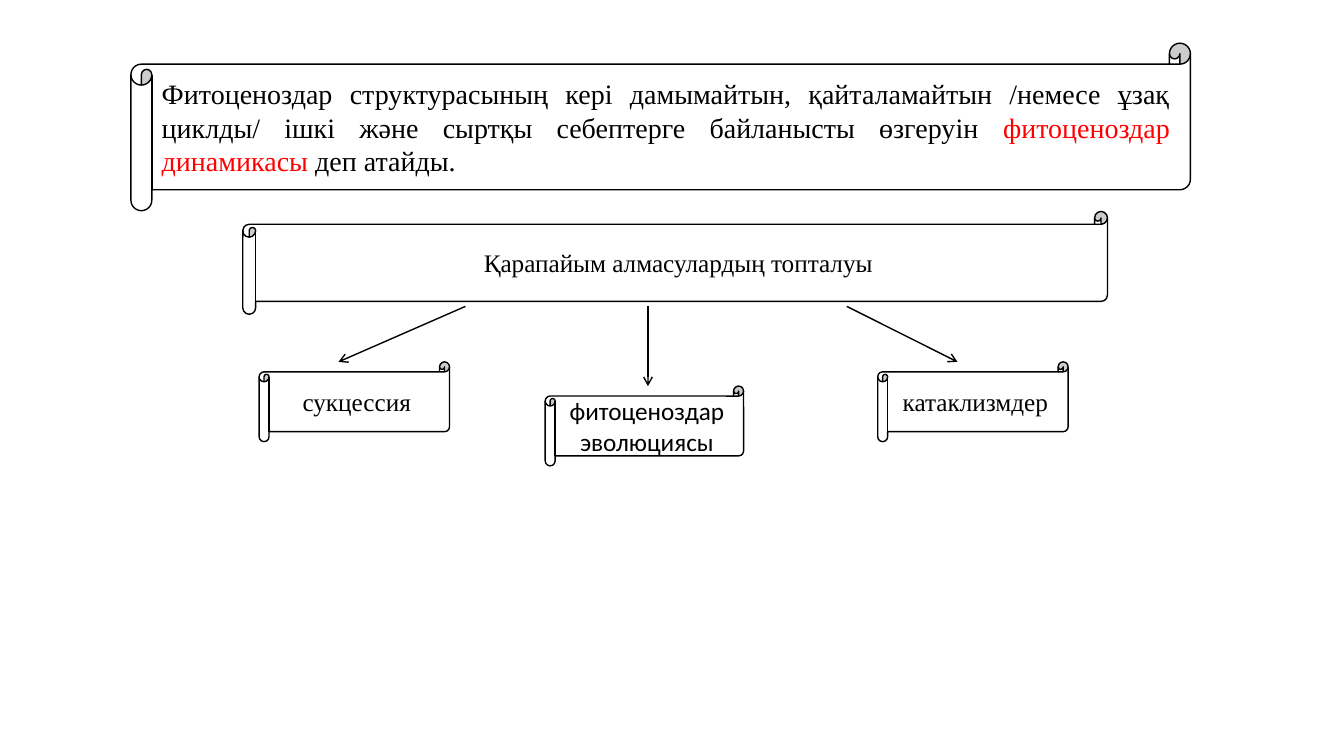
from lxml import etree
from pptx import Presentation
from pptx.dml.color import RGBColor
from pptx.enum import shapes, text
from pptx.oxml import ns
from pptx.util import Cm, Pt

SERIF = "Times New Roman"
SANS = "Calibri"
BLACK, WHITE, RED = "000000", "FFFFFF", "FF0000"

ARROW_TOP = 7.72
BRANCH_HEIGHT = 2.01
# label, font, left, top, width, arrow start x, arrow end x
BRANCHES = [
    ("сукцессия", SERIF, 6.53, 9.12, 4.8, 11.73, 8.53),
    ("фитоценоздар эволюциясы", SANS, 13.74, 9.73, 5, 16.33, 16.33),
    ("катаклизмдер", SERIF, 22.12, 9.12, 4.8, 21.34, 24.13),
]


def color(value):
    return RGBColor.from_string(value)


def add_scroll(page, box, spans, size=18, font=SERIF, align=text.PP_ALIGN.CENTER):
    """Draw a scroll in box (left, top, width, height) with (words, color) spans."""
    scroll = page.shapes.add_shape(
        shapes.MSO_SHAPE.HORIZONTAL_SCROLL, *(Cm(length) for length in box))
    scroll.shadow.inherit = False
    scroll.fill.solid()
    scroll.fill.fore_color.rgb = color(WHITE)
    scroll.line.color.rgb = color(BLACK)
    scroll.line.width = Pt(1)

    frame = scroll.text_frame
    frame.word_wrap = True
    frame.vertical_anchor = text.MSO_ANCHOR.MIDDLE
    para = frame.paragraphs[0]
    para.alignment = align
    for words, ink in spans:
        span = para.add_run()
        span.text = words
        span.font.name = font
        span.font.size = Pt(size)
        span.font.color.rgb = color(ink)


def add_arrow(page, start, end):
    arrow = page.shapes.add_connector(
        shapes.MSO_CONNECTOR.STRAIGHT, *(Cm(length) for length in start + end))
    arrow.line.color.rgb = color(BLACK)
    arrow.line.width = Pt(1)
    # Open arrowhead, no shadow
    outline = arrow.line._get_or_add_ln()
    etree.SubElement(outline, ns.qn("a:tailEnd"), type="arrow")
    etree.SubElement(arrow._element.spPr, ns.qn("a:effectLst"))


def add_definition(page, box):
    spans = [
        ("Фитоценоздар структурасының кері дамымайтын, қайталамайтын /немесе ұзақ "
         "циклды/ ішкі және сыртқы себептерге байланысты өзгеруін ", BLACK),
        ("фитоценоздар динамикасы ", RED),
        ("деп атайды. ", BLACK),
    ]
    add_scroll(page, box, spans, size=20, align=text.PP_ALIGN.JUSTIFY)


def add_grouping(page, box):
    add_scroll(page, box, [("Қарапайым алмасулардың топталуы", BLACK)])


def add_branch(page, box, label, font, start_x, end_x):
    """Draw a branch scroll and the arrow that comes down to its top."""
    add_arrow(page, (start_x, ARROW_TOP), (end_x, box[1]))
    add_scroll(page, box, [(label, BLACK)], font=font)


def main():
    deck = Presentation()
    deck.slide_width, deck.slide_height = Cm(33.87), Cm(19.05)
    page = deck.slides.add_slide(deck.slide_layouts[6])

    # Definition and heading
    add_definition(page, (3.3, 1.09, 26.7, 4.22))
    add_grouping(page, (6.12, 5.33, 21.79, 2.59))

    # Three kinds of change
    for label, font, left, top, width, start_x, end_x in BRANCHES:
        add_branch(page, (left, top, width, BRANCH_HEIGHT), label, font, start_x, end_x)

    deck.save("out.pptx")


if __name__ == "__main__":
    main()
